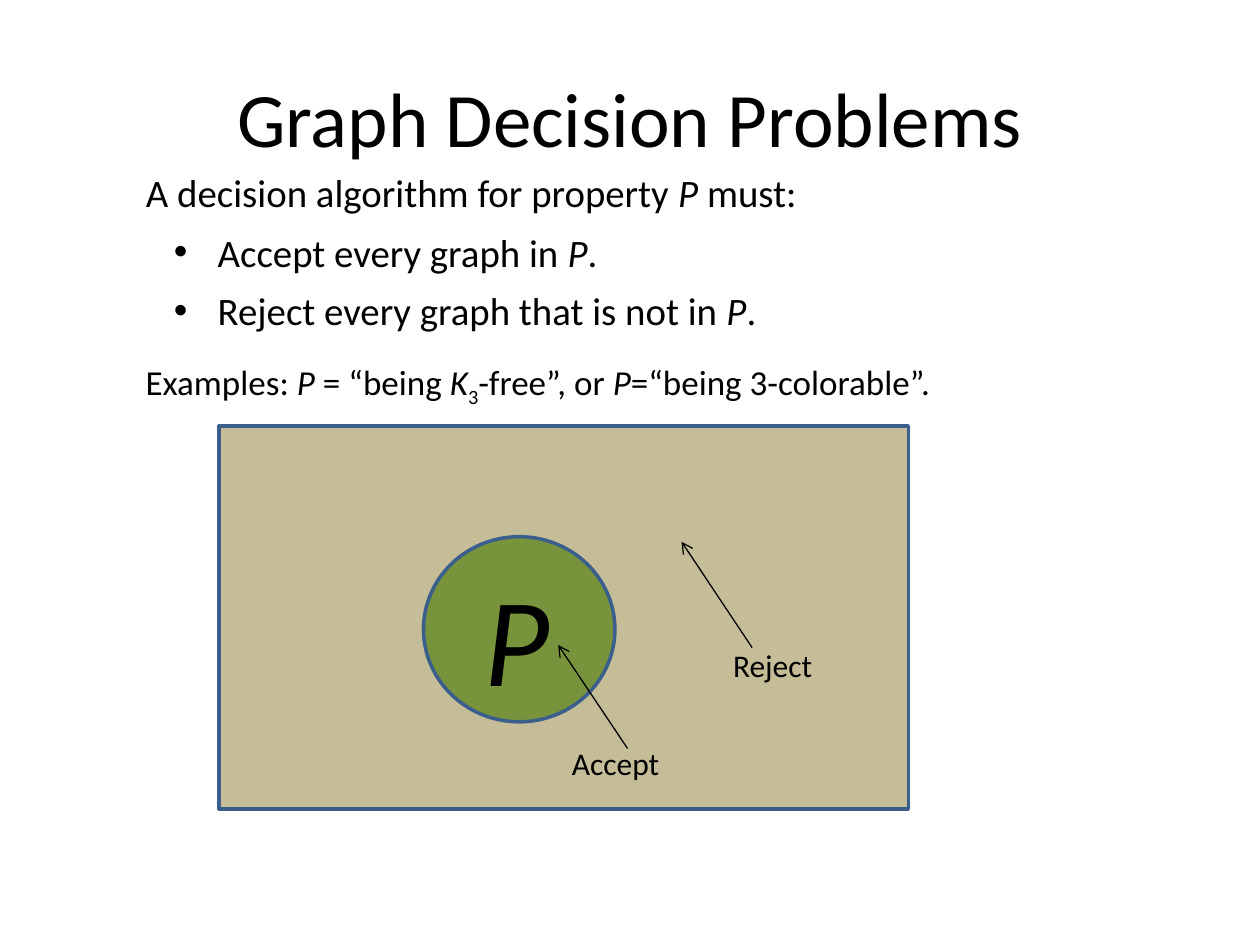
from dataclasses import dataclass
from typing import Optional

from lxml import etree
from pptx import Presentation
from pptx.dml import color
from pptx.enum import shapes, text
from pptx.oxml import ns
from pptx.util import Pt

COLORS = {"ink": "000000", "outline": "3A5F8C", "universe": "C4BD97", "property": "77933C"}
FONT = "Calibri"
LEFT, CENTER, RIGHT = text.PP_ALIGN.LEFT, text.PP_ALIGN.CENTER, text.PP_ALIGN.RIGHT


@dataclass
class Run:
    text: str
    italic: bool = False
    baseline: int = 0


@dataclass
class Line:
    runs: list
    margin: float
    indent: float
    size: float
    level: int = 0
    bullet: Optional[str] = None
    spacing: float = 1.0


@dataclass
class Region:
    kind: shapes.MSO_SHAPE
    box: tuple
    fill: str


@dataclass
class Callout:
    label: str
    box: tuple
    start: tuple
    end: tuple


P = Run("P", italic=True)
BODY = [
    Line([Run("A decision algorithm for property "), P, Run(" must:")], 25, -5, 22.2, spacing=0.9),
    Line([Run("Accept every graph in "), P, Run(".")], 61, -25, 22.2, 1, "•"),
    Line([Run("Reject every graph that is not in "), P, Run(".")], 61, -25, 22.2, 1, "•"),
]
EXAMPLES = Line(
    [Run("Examples: "), P, Run(" = “being "), Run("K", italic=True), Run("3", baseline=-25000),
     Run("-free”, or "), P, Run("=“being 3-colorable”.")], 25, -19.5, 20)
REGIONS = [
    Region(shapes.MSO_SHAPE.RECTANGLE, (125.3, 243.4, 393.8, 218.9), "universe"),
    Region(shapes.MSO_SHAPE.OVAL, (242, 306.7, 109.4, 105.8), "property"),
]
CALLOUTS = [
    Callout("Accept", (319.7, 421.9, 126.7, 28.8), (358.6, 427.7), (319, 368.6)),
    Callout("Reject", (411.8, 365.8, 135.4, 28.8), (429.8, 370.1), (389.5, 309.6)),
]


def rgb(name: str) -> color.RGBColor:
    return color.RGBColor.from_string(COLORS[name])


def place(sp, box: tuple) -> None:
    sp.left, sp.top, sp.width, sp.height = map(Pt, box)


def write(p, content: str, size: float = 18, italic: bool = False, baseline: int = 0) -> None:
    r = p.add_run()
    r.text = content
    r.font.name, r.font.size, r.font.italic = FONT, Pt(size), italic
    r.font.color.rgb = rgb("ink")
    if baseline:
        r.font._element.set("baseline", str(baseline))


def write_line(p, line: Line) -> None:
    p.level, p.alignment = line.level, LEFT
    p.line_spacing, p.space_before = line.spacing, Pt(7)
    pPr = p._p.get_or_add_pPr()
    pPr.set("marL", str(Pt(line.margin)))
    pPr.set("indent", str(Pt(line.indent)))
    if line.bullet:
        etree.SubElement(pPr, ns.qn("a:buChar")).set("char", line.bullet)
    else:
        etree.SubElement(pPr, ns.qn("a:buNone"))
    for run in line.runs:
        write(p, run.text, size=line.size, italic=run.italic, baseline=run.baseline)


def add_box(parent, box: tuple, align=LEFT):
    tf = parent.add_textbox(*map(Pt, box)).text_frame
    tf.word_wrap = True
    p = tf.paragraphs[0]
    p.alignment = align
    return p


def add_region(parent, region: Region) -> None:
    sp = parent.add_shape(region.kind, *map(Pt, region.box))
    sp.shadow.inherit = False
    sp.fill.solid()
    sp.fill.fore_color.rgb = rgb(region.fill)
    sp.line.color.rgb, sp.line.width = rgb("outline"), Pt(2)


def add_callout(parent, callout: Callout) -> None:
    cxn = parent.add_connector(shapes.MSO_CONNECTOR.STRAIGHT, *map(Pt, callout.start + callout.end))
    cxn.line.color.rgb, cxn.line.width = rgb("ink"), Pt(0.75)
    etree.SubElement(cxn.line._get_or_add_ln(), ns.qn("a:tailEnd")).set("type", "arrow")
    etree.SubElement(cxn._element.spPr, ns.qn("a:effectLst"))
    write(add_box(parent, callout.box), callout.label)


def main() -> None:
    prs = Presentation()
    prs.slide_width, prs.slide_height = Pt(720), Pt(540)
    s = prs.slides.add_slide(prs.slide_layouts[1])
    title, body = s.placeholders

    place(title, (36, 21.6, 648, 90))
    title.text_frame.vertical_anchor = text.MSO_ANCHOR.MIDDLE
    title.text_frame.paragraphs[0].alignment = CENTER
    write(title.text_frame.paragraphs[0], "Graph Decision Problems", size=44)

    place(body, (56.2, 95.8, 641.5, 95.8))
    tf = body.text_frame
    tf.auto_size = text.MSO_AUTO_SIZE.NONE
    for i, line in enumerate(BODY):
        write_line(tf.add_paragraph() if i else tf.paragraphs[0], line)

    diagram = s.shapes.add_group_shape().shapes
    for region in REGIONS:
        add_region(diagram, region)
    write(add_box(diagram, (267.8, 316.8, 53.3, 94.3), RIGHT), "P", size=72, italic=True)
    for callout in CALLOUTS:
        add_callout(s.shapes.add_group_shape().shapes, callout)
    write_line(add_box(s.shapes, (70.6, 202.5, 521.3, 40)), EXAMPLES)

    prs.save("out.pptx")


if __name__ == "__main__":
    main()
